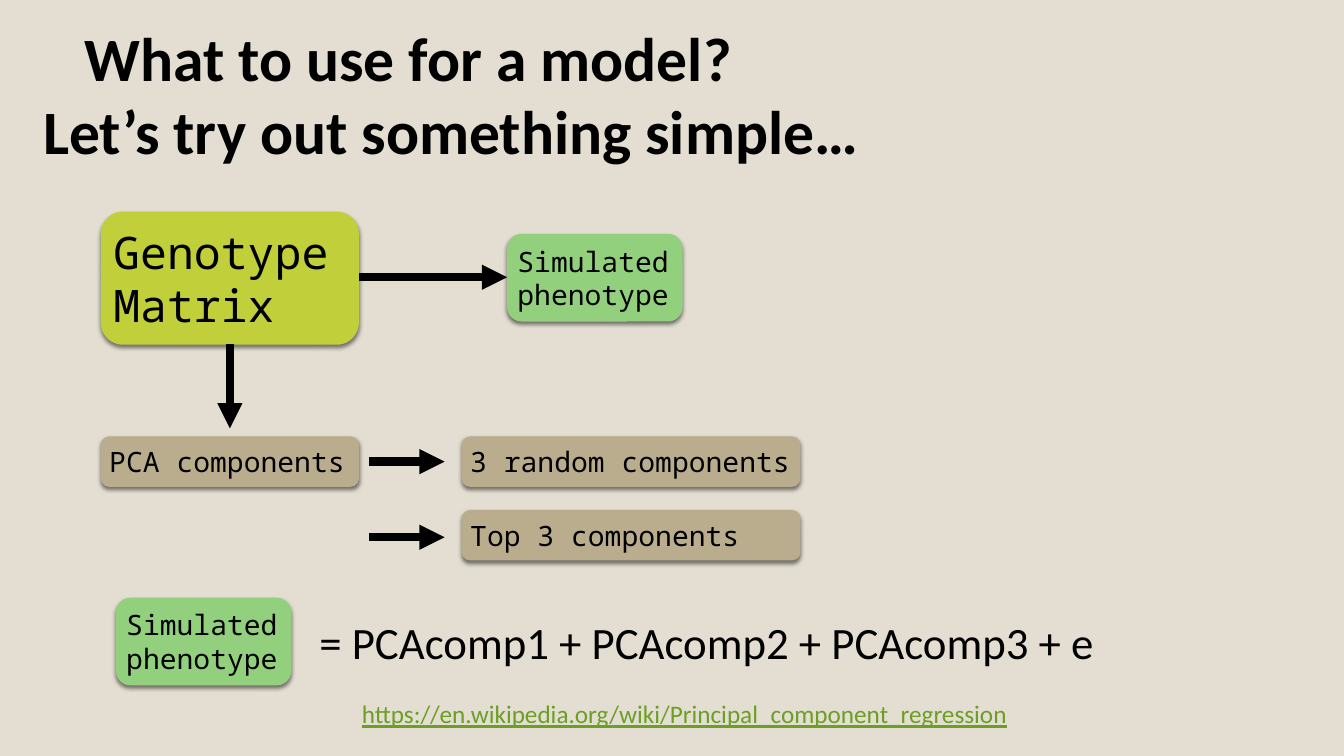
from dataclasses import dataclass

from lxml import etree
from pptx import Presentation
from pptx.dml.color import RGBColor
from pptx.enum.shapes import MSO_CONNECTOR, MSO_SHAPE
from pptx.enum.text import MSO_ANCHOR, MSO_AUTO_SIZE, PP_ALIGN
from pptx.oxml.ns import qn
from pptx.util import Inches, Pt

ROUND = MSO_SHAPE.ROUNDED_RECTANGLE
STRAIGHT = MSO_CONNECTOR.STRAIGHT
TOP, MIDDLE = MSO_ANCHOR.TOP, MSO_ANCHOR.MIDDLE
FIT = MSO_AUTO_SIZE.SHAPE_TO_FIT_TEXT
LEFT = PP_ALIGN.LEFT


@dataclass(frozen=True)
class Theme:
    paper: str = "E3DED1"
    ink: str = "000000"
    lime: str = "C0CF3A"
    green: str = "93D07D"
    tan: str = "BAAD8D"
    link: str = "6B9F25"
    sans: str = "Calibri"
    mono: str = "Noto Sans Mono"
    title: int = 44
    large: int = 32
    small: int = 20
    note: int = 18
    stroke: int = 6
    inset: float = 0.06


class Board:
    def __init__(self, slide, theme):
        self.slide, self.theme = slide, theme
        fill = slide.background.fill
        fill.solid()
        fill.fore_color.rgb = RGBColor.from_string(theme.paper)

    def letter(self, shape, text, size, face, color=None, wrap=True, anchor=TOP, **style):
        frame = shape.text_frame
        frame.text = text
        form = {"word_wrap": wrap, "auto_size": FIT, "vertical_anchor": anchor}
        for name, value in form.items():
            setattr(frame, name, value)
        look = {"size": Pt(size), "name": face, "bold": False, **style}
        for part in frame.paragraphs:
            part.alignment = LEFT
            for name, value in look.items():
                setattr(part.font, name, value)
            part.font.color.rgb = RGBColor.from_string(color or self.theme.ink)

    def title(self, text, *area):
        shape = self.slide.shapes.title
        for name, value in zip(("left", "top", "width", "height"), area):
            setattr(shape, name, Inches(value))
        self.letter(shape, text, self.theme.title, self.theme.sans, bold=True)

    def label(self, text, area, size, **style):
        shape = self.slide.shapes.add_textbox(*map(Inches, area))
        self.letter(shape, text, size, self.theme.sans, **style)

    def box(self, text, area, fill, size):
        shape = self.slide.shapes.add_shape(ROUND, *map(Inches, area))
        shape.fill.solid()
        shape.fill.fore_color.rgb = RGBColor.from_string(fill)
        shape.line.fill.background()
        self.shade(shape)
        for side in ("left", "top", "right", "bottom"):
            setattr(shape.text_frame, f"margin_{side}", Inches(self.theme.inset))
        self.letter(shape, text, size, self.theme.mono, anchor=MIDDLE)

    def shade(self, shape):
        shape.shadow.inherit = False
        effects = shape.element.spPr.find(qn("a:effectLst"))
        cast = etree.SubElement(effects, qn("a:outerShdw"), blurRad=str(Pt(3)),
                                dist=str(Pt(2)), dir="5400000", rotWithShape="0")
        tone = etree.SubElement(cast, qn("a:srgbClr"), val=self.theme.ink)
        etree.SubElement(tone, qn("a:alpha"), val="50000")

    def arrow(self, *ends):
        link = self.slide.shapes.add_connector(STRAIGHT, *map(Inches, ends))
        link.line.width = Pt(self.theme.stroke)
        link.line.color.rgb = RGBColor.from_string(self.theme.ink)
        props = link.element.spPr
        etree.SubElement(props.find(qn("a:ln")), qn("a:tailEnd"), type="triangle")
        etree.SubElement(props, qn("a:effectLst"))


def main():
    deck = Presentation()
    deck.slide_width, deck.slide_height = Inches(13.33), Inches(7.5)
    theme = Theme()
    board = Board(deck.slides.add_slide(deck.slide_layouts[5]), theme)

    # Heading
    board.title("What to use for a model?", 0.74, 0.15, 11.05, 0.84)
    board.label("Let’s try out something simple…", (0.33, 0.87, 11.05, 0.84),
                theme.title, bold=True)

    # Genotype matrix and its two outputs
    board.box("Genotype\nMatrix", (1, 2.1, 2.56, 1.32), theme.lime, theme.large)
    board.arrow(3.56, 2.75, 5.03, 2.75)
    board.arrow(2.28, 3.41, 2.28, 4.25)
    for left, top in ((5.03, 2.32), (1.15, 5.93)):
        board.box("Simulated phenotype", (left, top, 1.74, 0.87),
                  theme.green, theme.small)

    # Component choices
    board.box("PCA components", (1, 4.33, 2.56, 0.5), theme.tan, theme.small)
    for row, text in enumerate(("3 random components", "Top 3 components")):
        board.box(text, (4.58, 4.33 + 0.73 * row, 3.36, 0.5), theme.tan, theme.small)
        level = 4.58 + 0.75 * row
        board.arrow(3.66, level, 4.41, level)

    # Model formula and reference
    board.label("= PCAcomp1 + PCAcomp2 + PCAcomp3 + e", (3.07, 6.05, 7.97, 0.64),
                theme.large, wrap=False)
    board.label("https://en.wikipedia.org/wiki/Principal_component_regression",
                (3.49, 6.88, 6.68, 0.4), theme.note, color=theme.link,
                wrap=False, underline=True)

    deck.save("out.pptx")


if __name__ == "__main__":
    main()
